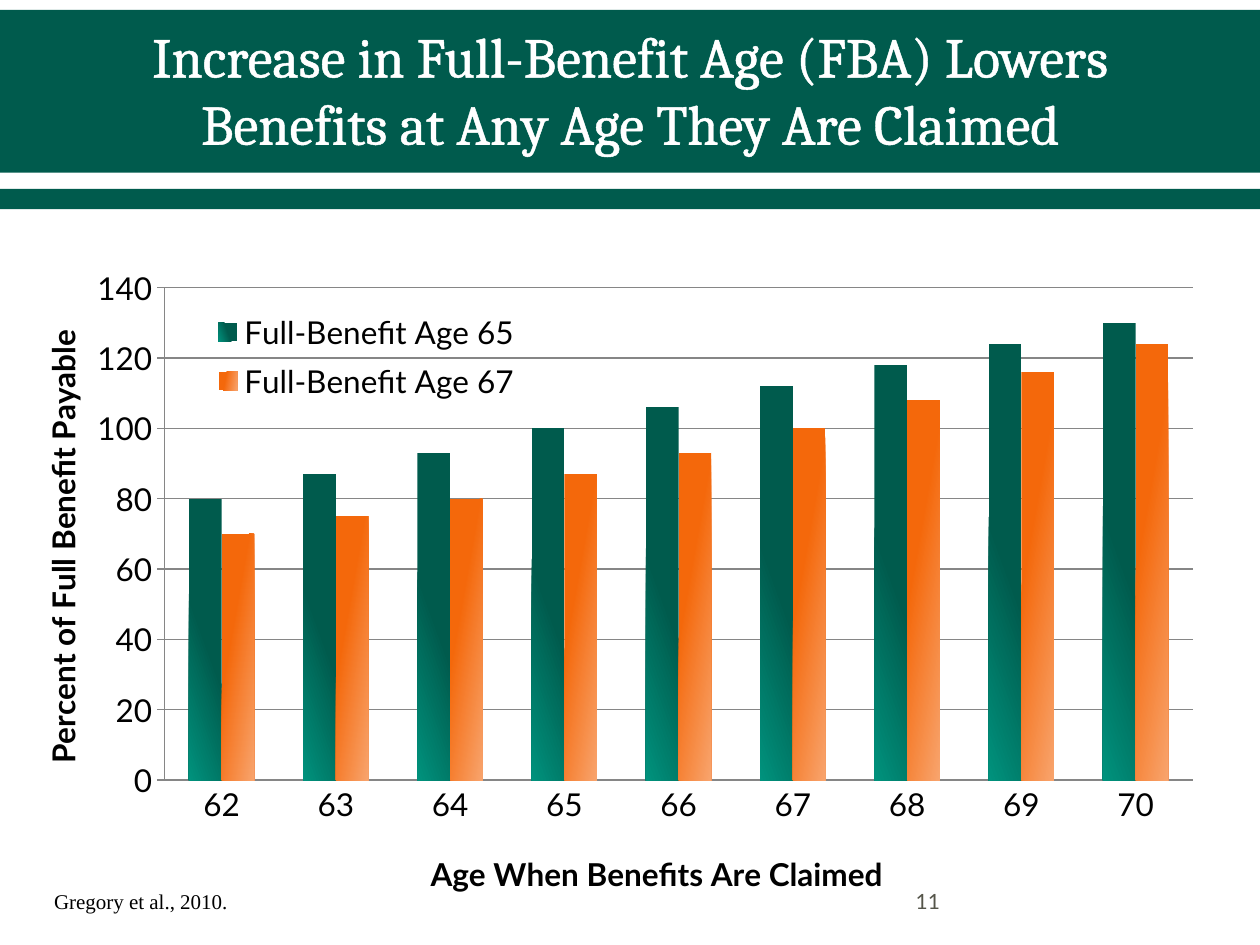
from lxml.etree import SubElement
from pptx import Presentation
from pptx.chart.data import CategoryChartData
from pptx.dml.color import RGBColor
from pptx.enum.chart import XL_CHART_TYPE, XL_LEGEND_POSITION, XL_TICK_MARK
from pptx.enum.shapes import MSO_SHAPE
from pptx.enum.text import MSO_ANCHOR, PP_ALIGN
from pptx.oxml import parse_xml
from pptx.oxml.ns import nsdecls, qn
from pptx.util import Cm, Pt

GREEN, WHITE, BLACK, GRAY = "005B4D", "FFFFFF", "000000", "868686"
BANDS = [(0, 0.2, 25.4, 3.28), (0, 3.81, 25.4, 0.41)]
TITLE = "Increase in Full-Benefit Age (FBA) Lowers Benefits at Any Age They Are Claimed"
TEXTS = [
    (TITLE, (1.07, 0.2, 23.29, 3.18), 32, "Cambria", WHITE, PP_ALIGN.CENTER, MSO_ANCHOR.MIDDLE, True),
    ("11", (18.21, 17.65, 5.92, 1.02), 12, "Lato", "55554A", PP_ALIGN.LEFT, MSO_ANCHOR.MIDDLE, True),
    ("Gregory et al., 2010.", (0.84, 17.78, 4.06, 0.76), 12, "Times New Roman", BLACK,
     PP_ALIGN.LEFT, MSO_ANCHOR.TOP, False),
]
AGES = [str(age) for age in range(62, 71)]
SERIES = [
    ("Full-Benefit Age 65", [80, 87, 93, 100, 106, 112, 118, 124, 130],
     [(0, GREEN), (50, GREEN), (100, "00927D")], 160),
    ("Full-Benefit Age 67", [70, 75, 80, 87, 93, 100, 108, 116, 124],
     [(0, "F4680B"), (36, "F4680B"), (100, "F8A46D")], 10),
]
CHART_BOX = (0.43, 3.61, 26.24, 14.6)


def rgb(value):
    return RGBColor.from_string(value)


def box(lengths):
    return [Cm(v) for v in lengths]


def add_band(s, place):
    sp = s.shapes.add_shape(MSO_SHAPE.RECTANGLE, *box(place))
    sp.shadow.inherit = False
    sp.fill.solid()
    sp.fill.fore_color.rgb = rgb(GREEN)
    sp.line.fill.background()


def add_text(s, text, place, size, font, color, align, anchor, wrap):
    tf = s.shapes.add_textbox(*box(place)).text_frame
    tf.word_wrap = wrap
    tf.vertical_anchor = anchor
    p = tf.paragraphs[0]
    p.alignment = align
    r = p.add_run()
    r.text = text
    r.font.size = Pt(size)
    r.font.name = font
    r.font.color.rgb = rgb(color)
    return r


def outline(r, color, width):
    r.font._element.insert(0, parse_xml(
        f'<a:ln {nsdecls("a")} w="{Pt(width)}"><a:solidFill><a:srgbClr val="{color}"/></a:solidFill></a:ln>'))


def set_layout(el, index, inner=False, **parts):
    old = el.find(qn("c:layout"))
    if old is not None:
        el.remove(old)
    layout = parse_xml(f'<c:layout {nsdecls("c")}/>')
    manual = SubElement(layout, qn("c:manualLayout"))
    if inner:
        SubElement(manual, qn("c:layoutTarget")).set("val", "inner")
    for key in "xy":
        SubElement(manual, qn(f"c:{key}Mode")).set("val", "edge")
    for key, value in parts.items():
        SubElement(manual, qn(f"c:{key}")).set("val", str(value))
    el.insert(index, layout)


def set_gradient(series, stops, angle):
    gs = "".join(f'<a:gs pos="{pos * 1000}"><a:srgbClr val="{color}"/></a:gs>' for pos, color in stops)
    series._element.get_or_add_spPr().append(parse_xml(
        f'<a:gradFill {nsdecls("a")} rotWithShape="1"><a:gsLst>{gs}</a:gsLst>'
        f'<a:lin ang="{angle * 60000}" scaled="0"/></a:gradFill>'))


def style_axis(axis, title, x, y):
    axis.format.line.color.rgb = rgb(GRAY)
    axis.tick_labels.font.size = Pt(18)
    r = axis.axis_title.text_frame.paragraphs[0].add_run()
    r.text = title
    r.font.size = Pt(18)
    r.font.bold = True
    r.font.name = "Lato"
    r.font.color.rgb = rgb(BLACK)
    set_layout(axis.axis_title._element, 1, x=x, y=y)


def add_benefit_chart(s):
    data = CategoryChartData(number_format="#,##0")
    data.categories = AGES
    for name, values, _, _ in SERIES:
        data.add_series(name, values)
    chart = s.shapes.add_chart(XL_CHART_TYPE.COLUMN_CLUSTERED, *box(CHART_BOX), data).chart
    chart.has_title = False
    chart.font.size = Pt(18)
    chart.font.name = "Lato"
    chart.font.color.rgb = rgb(BLACK)
    plot = chart.plots[0]
    plot.vary_by_categories = False
    plot.gap_width = 150
    plot.overlap = 0
    for series, (_, _, stops, angle) in zip(plot.series, SERIES):
        set_gradient(series, stops, angle)
    ages, percent = chart.category_axis, chart.value_axis
    style_axis(ages, "Age When Benefits Are Claimed", 0.31, 0.92)
    style_axis(percent, "Percent of Full Benefit Payable", 0.01, 0.2)
    ages.major_tick_mark = XL_TICK_MARK.NONE
    percent.major_tick_mark = XL_TICK_MARK.OUTSIDE
    percent.minimum_scale, percent.maximum_scale, percent.major_unit = 0, 140, 20
    percent.major_gridlines.format.line.color.rgb = rgb(GRAY)
    chart.has_legend = True
    chart.legend.position = XL_LEGEND_POSITION.RIGHT
    chart.legend.include_in_layout = False
    chart.legend.font.size = Pt(18)
    set_layout(chart.legend._element, 1, x=0.14, y=0.17, w=0.25, h=0.15)
    plot_area = chart._chartSpace.chart.plotArea
    set_layout(plot_area, 0, inner=True, x=0.11, y=0.15, w=0.79, h=0.68)


def main():
    prs = Presentation()
    prs.slide_width, prs.slide_height = Cm(25.4), Cm(19.05)
    s = prs.slides.add_slide(prs.slide_layouts[6])
    for band in BANDS:
        add_band(s, band)
    title, *_ = [add_text(s, *text) for text in TEXTS]
    outline(title, WHITE, 1.1)
    add_benefit_chart(s)
    prs.save("out.pptx")


if __name__ == "__main__":
    main()
